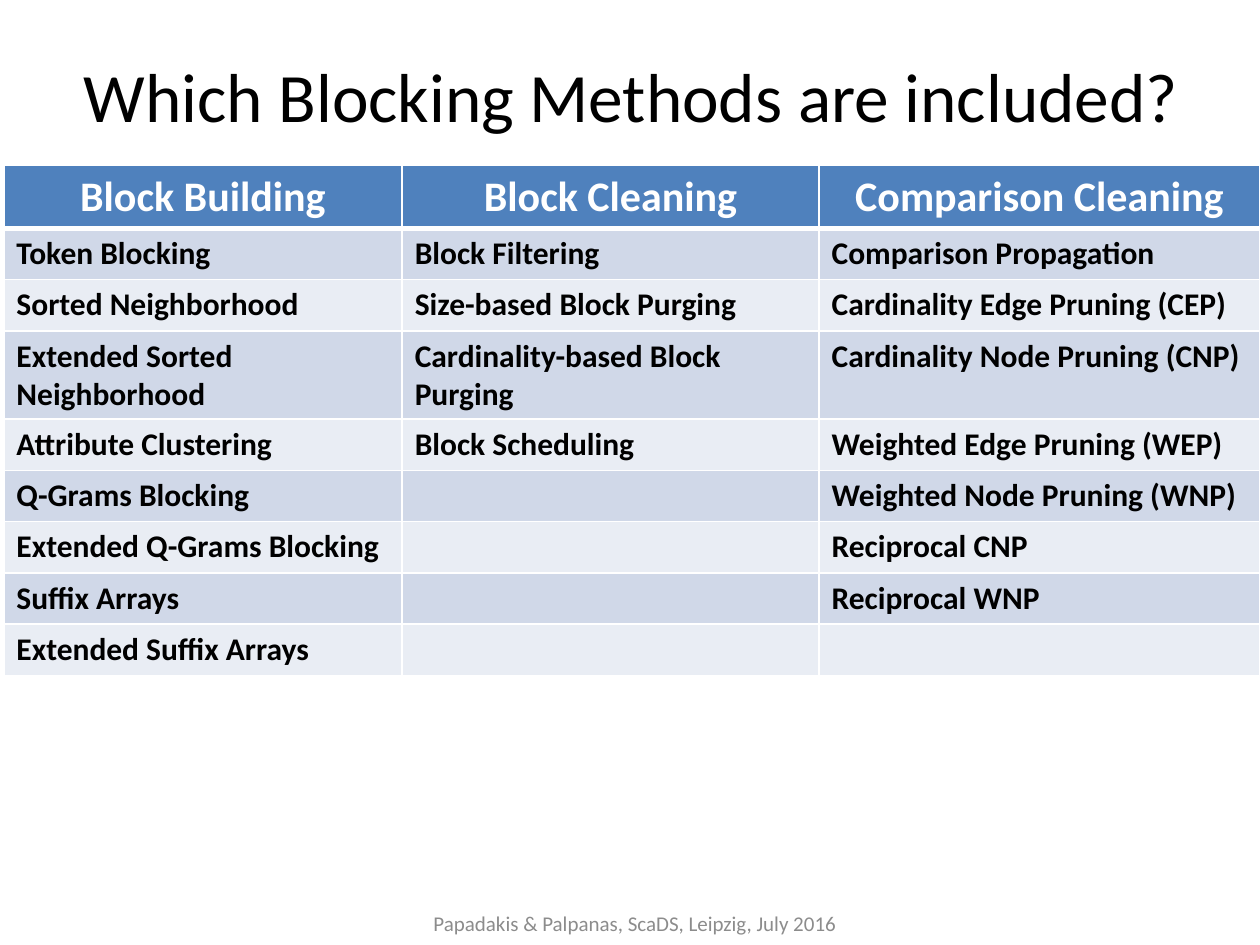
from dataclasses import dataclass
from itertools import zip_longest

from lxml import etree
from pptx import Presentation
from pptx.dml.color import RGBColor
from pptx.enum import text
from pptx.oxml import ns
from pptx.util import Pt

COLORS = {
    "ink": "000000",
    "white": "FFFFFF",
    "header": "4F81BD",
    "odd": "D0D8E8",
    "even": "E9EDF4",
    "footer": "8C8C8C",
}
FONT = "Calibri"
ROW_HEIGHT = 29.3


@dataclass
class Caption:
    wording: str
    left: float
    top: float
    width: float
    height: float
    size: float
    color: str


@dataclass
class Stage:
    heading: str
    width: float
    methods: list[str]


CAPTIONS = [
    Caption("Which Blocking Methods are included?", 36.72, 9.36, 648, 90, 39.6, "ink"),
    Caption("Papadakis & Palpanas, ScaDS, Leipzig, July 2016",
            235.44, 513.36, 254.88, 28.8, 12, "footer"),
]
STAGES = [
    Stage("Block Building", 227.6, [
        "Token Blocking", "Sorted Neighborhood", "Extended Sorted Neighborhood",
        "Attribute Clustering", "Q-Grams Blocking", "Extended Q-Grams Blocking",
        "Suffix Arrays", "Extended Suffix Arrays",
    ]),
    Stage("Block Cleaning", 238.2, [
        "Block Filtering", "Size-based Block Purging",
        "Cardinality-based Block Purging", "Block Scheduling",
    ]),
    Stage("Comparison Cleaning", 252, [
        "Comparison Propagation", "Cardinality Edge Pruning (CEP)",
        "Cardinality Node Pruning (CNP)", "Weighted Edge Pruning (WEP)",
        "Weighted Node Pruning (WNP)", "Reciprocal CNP", "Reciprocal WNP",
    ]),
]


def style_paragraph(paragraph, size: float, color: str, bold: bool, centered: bool) -> None:
    paragraph.alignment = text.PP_ALIGN.CENTER if centered else text.PP_ALIGN.LEFT
    paragraph.font.name = FONT
    paragraph.font.size = Pt(size)
    paragraph.font.bold = bold
    paragraph.font.color.rgb = RGBColor.from_string(COLORS[color])


def draw_caption(slide, caption: Caption) -> None:
    frame = slide.shapes.add_textbox(
        Pt(caption.left), Pt(caption.top), Pt(caption.width), Pt(caption.height)
    ).text_frame
    frame.word_wrap = True
    frame.vertical_anchor = text.MSO_ANCHOR.MIDDLE
    frame.text = caption.wording
    style_paragraph(frame.paragraphs[0], caption.size, caption.color, False, True)


def draw_borders(cell, top: float, bottom: float) -> None:
    properties = cell._tc.get_or_add_tcPr()
    for side, width in {"lnL": 1, "lnR": 1, "lnT": top, "lnB": bottom}.items():
        line = etree.SubElement(properties, ns.qn(f"a:{side}"), w=str(Pt(width)))
        fill = etree.SubElement(line, ns.qn("a:solidFill"))
        etree.SubElement(fill, ns.qn("a:srgbClr"), val=COLORS["white"])


def fill_cell(cell, wording: str, row: int) -> None:
    heading = row == 0
    draw_borders(cell, 3 if row == 1 else 1, 3 if heading else 1)
    band = "header" if heading else "odd" if row % 2 else "even"
    cell.fill.solid()
    cell.fill.fore_color.rgb = RGBColor.from_string(COLORS[band])
    cell.text = wording
    style_paragraph(cell.text_frame.paragraphs[0], 24 if heading else 18,
                    "white" if heading else "ink", True, heading)


def draw_methods(slide, stages: list[Stage], left: float, top: float) -> None:
    rows = list(zip_longest(*([s.heading, *s.methods] for s in stages), fillvalue=""))
    table = slide.shapes.add_table(
        len(rows), len(stages), Pt(left), Pt(top),
        Pt(sum(s.width for s in stages)), Pt(ROW_HEIGHT * len(rows)),
    ).table
    table.first_row = table.horz_banding = False
    for column, stage in zip(table.columns, stages):
        column.width = Pt(stage.width)
    for row, wordings in enumerate(rows):
        table.rows[row].height = Pt(ROW_HEIGHT)
        for column, wording in enumerate(wordings):
            fill_cell(table.cell(row, column), wording, row)


def main() -> None:
    """Build the overview of blocking methods."""
    deck = Presentation()
    deck.slide_width, deck.slide_height = Pt(720), Pt(540)
    slide = deck.slides.add_slide(deck.slide_layouts[6])
    title, footer = CAPTIONS
    draw_caption(slide, title)
    draw_methods(slide, STAGES, 2.2, 94.5)
    draw_caption(slide, footer)
    deck.save("out.pptx")


if __name__ == "__main__":
    main()
